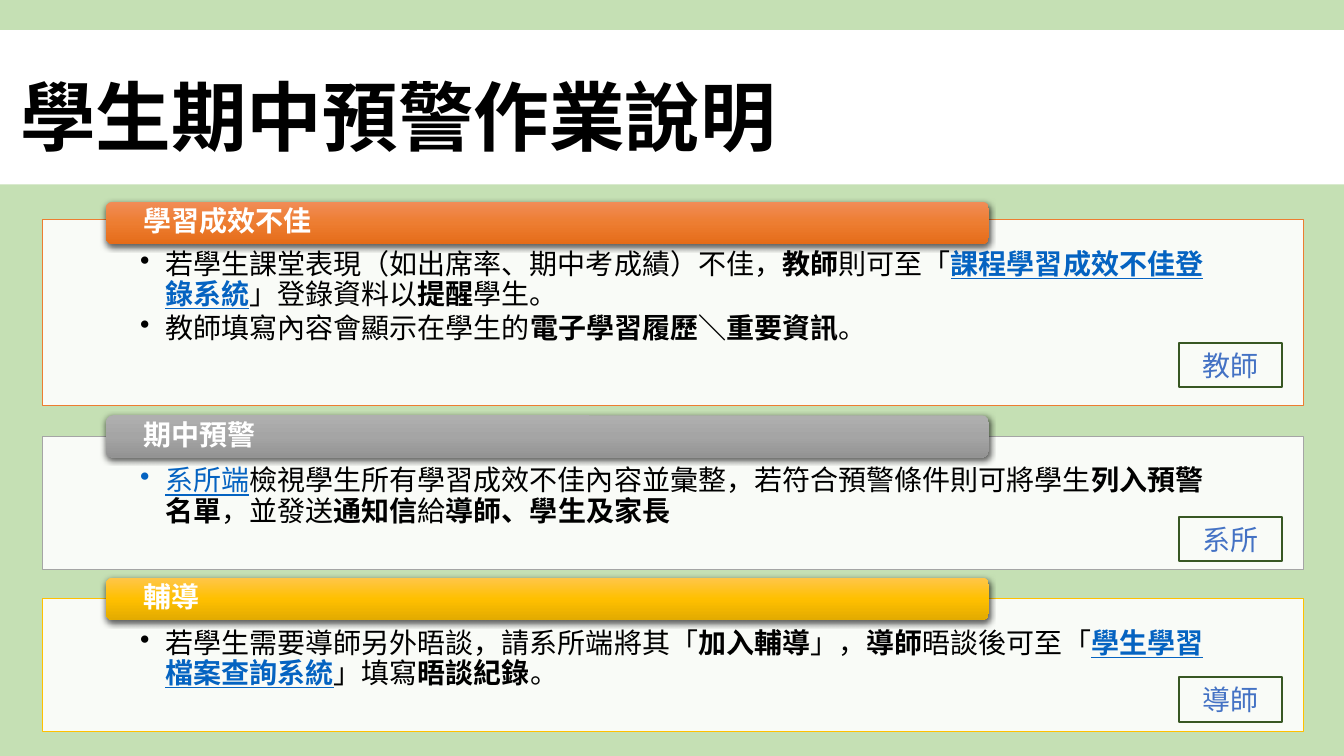
"""Build the slide on the midterm warning procedure for students."""
import dataclasses
import typing

import pptx
import pptx.dml.color
import pptx.enum.dml
import pptx.enum.shapes
import pptx.enum.text
import pptx.oxml
import pptx.oxml.ns
import pptx.util

SHAPE = pptx.enum.shapes.MSO_SHAPE
ANCHOR = pptx.enum.text.MSO_ANCHOR
ALIGN = pptx.enum.text.PP_ALIGN
NS = pptx.oxml.ns.nsdecls("a")
qn = pptx.oxml.ns.qn
SLIDE_W = pptx.util.Inches(13.333)
SLIDE_H = pptx.util.Inches(7.5)


@dataclasses.dataclass(frozen=True)
class Theme:
    font: str = "Noto Sans CJK SC"
    title_pt: int = 54
    text_pt: int = 20
    spacing: float = 0.9
    space_after_pt: int = 3
    opacity: int = 90
    backdrop: str = "C5E0B4"
    white: str = "FFFFFF"
    ink: str = "000000"
    link: str = "0563C1"
    tag_text: str = "4472C4"
    tag_line: str = "385723"


class Area(typing.NamedTuple):
    """Left, top, width and height in percent of the slide."""
    x: float
    y: float
    w: float
    h: float


class Run(typing.NamedTuple):
    text: str
    bold: bool = False
    link: bool = False


@dataclasses.dataclass(frozen=True)
class Section:
    heading: str
    tag: str
    gradient: tuple[str, str, str]
    bar_y: float
    panel_y: float
    panel_h: float
    tag_y: float
    bullets: tuple[tuple[Run, ...], ...]


THEME = Theme()
SECTIONS = (
    Section("學習成效不佳", "教師", ("F18C57", "ED7D31", "E56C19"), 26.67, 29.07, 24.53, 45.33, (
        (Run("若學生課堂表現（如出席率、期中考成績）不佳，"), Run("教師", True), Run("則可至「"),
         Run("課程學習成效不佳登錄系統", True, True), Run("」登錄資料以"),
         Run("提醒", True), Run("學生。")),
        (Run("教師填寫內容會顯示在學生的"), Run("電子學習履歷＼重要資訊", True), Run("。")),
    )),
    Section("期中預警", "系所", ("AFAFAF", "A5A5A5", "939393"), 54.93, 57.73, 17.6, 68.4, (
        (Run("系所端", link=True),
         Run("檢視學生所有學習成效不佳內容並彙整，若符合預警條件則可將學生"),
         Run("列入預警名單", True), Run("，並發送"), Run("通知信", True), Run("給"),
         Run("導師、學生及家長", True)),
    )),
    Section("輔導", "導師", ("FFC64B", "FFC000", "E3AB00"), 76.4, 79.2, 17.6, 89.6, (
        (Run("若學生需要導師另外晤談，請系所端將其「"), Run("加入輔導", True), Run("」，"),
         Run("導師", True), Run("晤談後可至「"), Run("學生學習檔案查詢系統", True, True),
         Run("」填寫"), Run("晤談紀錄", True), Run("。")),
    )),
)


def place(area: Area) -> tuple[int, int, int, int]:
    """Turn percentages into slide lengths."""
    return (int(SLIDE_W * area.x / 100), int(SLIDE_H * area.y / 100),
            int(SLIDE_W * area.w / 100), int(SLIDE_H * area.h / 100))


def rgb(color: str) -> pptx.dml.color.RGBColor:
    """Read a hex colour."""
    return pptx.dml.color.RGBColor.from_string(color)


def add_box(s, area: Area, *, kind=SHAPE.RECTANGLE, fill: str | None = None,
            line: str | None = None, line_pt: float = 0.5):
    """Add a flat shape with optional fill and line."""
    sp = s.shapes.add_shape(kind, *place(area))
    sp.shadow.inherit = False
    if fill:
        sp.fill.solid()
        sp.fill.fore_color.rgb = rgb(fill)
    else:
        sp.fill.background()
    if line:
        sp.line.color.rgb = rgb(line)
        sp.line.width = pptx.util.Pt(line_pt)
    else:
        sp.line.fill.background()
    return sp


def set_frame(sp, anchor, insets: tuple[float, float, float, float]):
    """Set wrapping, anchor and insets (left, top, right, bottom)."""
    tf = sp.text_frame
    tf.word_wrap = True
    tf.vertical_anchor = anchor
    tf.margin_left, tf.margin_top, tf.margin_right, tf.margin_bottom = map(pptx.util.Inches, insets)
    return tf


def add_text(p, text: str, *, size: int = THEME.text_pt, color: str = THEME.ink,
             bold: bool = False, underline: bool = False, align=ALIGN.LEFT,
             spacing: float = THEME.spacing) -> None:
    """Append a formatted run to a paragraph."""
    p.alignment = align
    p.line_spacing = spacing
    r = p.add_run()
    r.text = text
    r.font.name = THEME.font
    r.font.size = pptx.util.Pt(size)
    r.font.bold = bold
    r.font.underline = underline
    r.font.color.rgb = rgb(color)
    latin = r.font._element.find(qn("a:latin"))
    latin.addnext(pptx.oxml.parse_xml(f'<a:ea {NS} typeface="{THEME.font}"/>'))


def set_bullet(p) -> None:
    """Give a paragraph a hanging bullet."""
    pPr = p._p.get_or_add_pPr()
    pPr.set("marL", str(pptx.util.Inches(0.25)))
    pPr.set("indent", str(-pptx.util.Inches(0.25)))
    pPr.append(pptx.oxml.parse_xml(f'<a:buChar {NS} char="•"/>'))


def add_panel(s, section: Section) -> None:
    """Draw the translucent panel and its bullets."""
    sp = add_box(s, Area(3.15, section.panel_y, 93.83, section.panel_h),
                 fill=THEME.white, line=section.gradient[1])
    color = sp._element.spPr.find(qn("a:solidFill"))[0]
    color.append(pptx.oxml.parse_xml(f'<a:alpha {NS} val="{THEME.opacity * 1000}"/>'))
    tf = set_frame(sp, ANCHOR.TOP, (0.97, 0.3, 0.97, 0.16))
    for i, runs in enumerate(section.bullets):
        p = tf.add_paragraph() if i else tf.paragraphs[0]
        p.level = 1
        p.space_after = pptx.util.Pt(THEME.space_after_pt)
        for run in runs:
            add_text(p, run.text, bold=run.bold, underline=run.link,
                     color=THEME.link if run.link else THEME.ink)
        set_bullet(p)


def add_bar(s, section: Section) -> None:
    """Draw the shaded heading bar."""
    sp = add_box(s, Area(7.88, section.bar_y, 65.7, 5.6),
                 kind=SHAPE.ROUNDED_RECTANGLE, fill=section.gradient[1])
    spPr = sp._element.spPr
    stops = "".join(f'<a:gs pos="{i * 50000}"><a:srgbClr val="{c}"/></a:gs>'
                    for i, c in enumerate(section.gradient))
    spPr.replace(spPr.find(qn("a:solidFill")), pptx.oxml.parse_xml(
        f'<a:gradFill {NS}><a:gsLst>{stops}</a:gsLst><a:lin ang="5400000"/></a:gradFill>'))
    spPr.find(qn("a:effectLst")).append(pptx.oxml.parse_xml(
        f'<a:outerShdw {NS} blurRad="57150" dist="19050" dir="5400000" algn="ctr" '
        'rotWithShape="0"><a:srgbClr val="000000"><a:alpha val="63000"/></a:srgbClr></a:outerShdw>'))
    tf = set_frame(sp, ANCHOR.MIDDLE, (0.35, 0, 0.35, 0))
    add_text(tf.paragraphs[0], section.heading, color=THEME.white, bold=True)


def add_tag(s, section: Section) -> None:
    """Draw the outlined label of who acts."""
    sp = add_box(s, Area(87.75, section.tag_y, 7.65, 5.87), line=THEME.tag_line, line_pt=1.5)
    tf = set_frame(sp, ANCHOR.MIDDLE, (0.1, 0, 0.1, 0))
    add_text(tf.paragraphs[0], section.tag, color=THEME.tag_text, align=ALIGN.CENTER, spacing=1.0)


def main() -> None:
    """Build and save the slide."""
    prs = pptx.Presentation()
    prs.slide_width, prs.slide_height = SLIDE_W, SLIDE_H
    s = prs.slides.add_slide(prs.slide_layouts[6])
    add_box(s, Area(0, 0, 100, 100), fill=THEME.backdrop)
    add_box(s, Area(0, 4, 100, 20.4), fill=THEME.white)
    title = s.shapes.add_textbox(*place(Area(0.75, 8.93, 63.75, 13.07)))
    tf = set_frame(title, ANCHOR.BOTTOM, (0.1, 0.05, 0.1, 0.05))
    add_text(tf.paragraphs[0], "學生期中預警作業說明", size=THEME.title_pt, bold=True)
    for draw in (add_panel, add_bar, add_tag):
        for section in SECTIONS:
            draw(s, section)
    prs.save("out.pptx")


if __name__ == "__main__":
    main()
